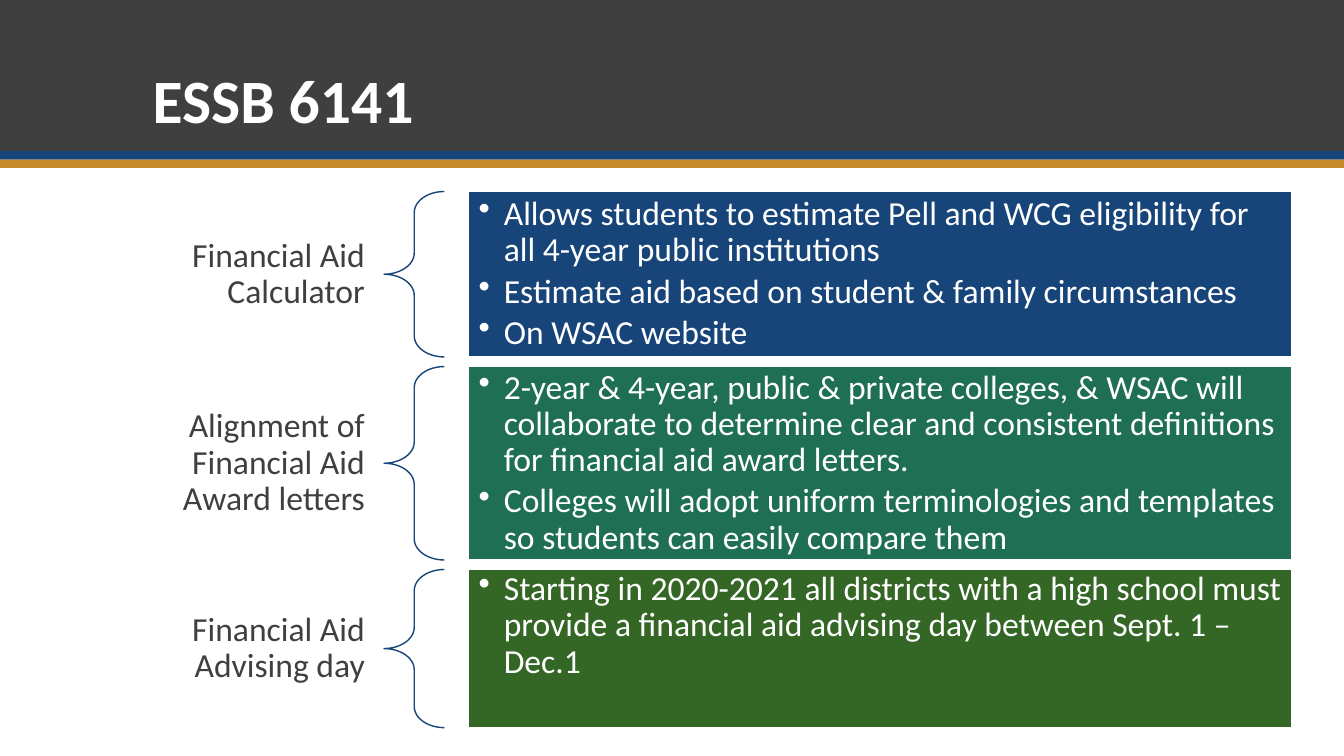
from pptx import Presentation
from pptx.dml.color import RGBColor
from pptx.enum.shapes import MSO_SHAPE as SHAPE
from pptx.enum.text import MSO_ANCHOR as ANCHOR, PP_ALIGN as ALIGN
from pptx.oxml import parse_xml
from pptx.oxml.ns import nsdecls
from pptx.util import Pt

GRAY, BLUE, GOLD, WHITE = "3F3F3F", "174479", "C6892B", "FFFFFF"
TEAL, GREEN = "1E6F53", "346625"
SLIDE_W, SLIDE_H = 960, 540
ROWS_TOP, ROW_GAP = 136.8, 6.8

# label, height, fill, text anchor, top inset, bullets
ROWS = [
    ("Financial Aid Calculator", 118.2, BLUE, ANCHOR.MIDDLE, 7.2, [
        "Allows students to estimate Pell and WCG eligibility for all 4-year "
        "public institutions",
        "Estimate aid based on student & family circumstances",
        "On WSAC website",
    ]),
    ("Alignment of Financial Aid Award letters", 138.2, TEAL, ANCHOR.MIDDLE, 7.2, [
        "2-year & 4-year, public & private colleges, & WSAC will collaborate to "
        "determine clear and consistent definitions for financial aid award letters.",
        "Colleges will adopt uniform terminologies and templates so students can "
        "easily compare them",
    ]),
    ("Financial Aid Advising day", 113, GREEN, ANCHOR.TOP, 1.5, [
        "Starting in 2020-2021 all districts with a high school must provide a "
        "financial aid advising day between Sept. 1 – Dec.1",
    ]),
]


def rgb(value):
    return RGBColor.from_string(value)


def add_panel(slide, box, fill, line=None):
    sp = slide.shapes.add_shape(SHAPE.RECTANGLE, *map(Pt, box))
    sp.shadow.inherit = False
    sp.fill.solid()
    sp.fill.fore_color.rgb = rgb(fill)
    if line:
        sp.line.color.rgb = rgb(line)
        sp.line.width = Pt(1)
    else:
        sp.line.fill.background()
    return sp


def add_brace(slide, box):
    sp = slide.shapes.add_shape(SHAPE.LEFT_BRACE, *map(Pt, box))
    sp.shadow.inherit = False
    sp.adjustments[0], sp.adjustments[1] = 0.35, 0.5
    sp.fill.background()
    sp.line.color.rgb = rgb(BLUE)
    sp.line.width = Pt(1)


def add_bullet(p):
    pPr = p._p.get_or_add_pPr()
    pPr.set("marL", str(Pt(18)))
    pPr.set("indent", str(-Pt(18)))
    pPr.append(parse_xml(f'<a:buChar {nsdecls("a")} char="•"/>'))


def write_text(sp, lines, color, insets, anchor=ANCHOR.MIDDLE, align=ALIGN.LEFT,
               size=24, bold=False, bullets=False):
    """Fill a shape with paragraphs; insets are left, top, right, bottom."""
    tf = sp.text_frame
    tf.word_wrap = True
    tf.vertical_anchor = anchor
    for side, inset in zip(("left", "top", "right", "bottom"), insets):
        setattr(tf, f"margin_{side}", Pt(inset))
    font_format = {"name": "Calibri", "size": Pt(size), "bold": bold}
    for i, line in enumerate(lines):
        p = tf.add_paragraph() if i else tf.paragraphs[0]
        if bullets:
            add_bullet(p)
        p.alignment = align
        p.line_spacing = 0.9
        p.space_after = Pt(3.6 if bullets else 0)
        r = p.add_run()
        r.text = line
        for name, value in font_format.items():
            setattr(r.font, name, value)
        r.font.color.rgb = rgb(color)


def add_text(slide, box, line, color, insets, **options):
    sp = slide.shapes.add_textbox(*map(Pt, box))
    write_text(sp, [line], color, insets, **options)


def add_header(slide, title):
    for top, height, fill in ((0, 108, GRAY), (108, 6, BLUE), (114, 6, GOLD)):
        add_panel(slide, (0, top, SLIDE_W, height), fill)
    add_text(slide, (102, 20, 756, 81.4), title, WHITE, (7.2, 3.6, 7.2, 3.6),
             anchor=ANCHOR.BOTTOM, size=44, bold=True)


def add_row(slide, top, label, height, fill, anchor, top_inset, bullets):
    add_text(slide, (58.3, top, 216, height), label, GRAY, (13.7, 5, 13.7, 5),
             align=ALIGN.RIGHT)
    add_brace(slide, (274.3, top, 43.2, height))
    sp = add_panel(slide, (334.8, top, 588, height), fill, line=WHITE)
    write_text(sp, bullets, WHITE, (7.2, top_inset, 7.2, 7.2), anchor=anchor,
               bullets=True)


def main():
    prs = Presentation()
    prs.slide_width, prs.slide_height = Pt(SLIDE_W), Pt(SLIDE_H)
    slide = prs.slides.add_slide(prs.slide_layouts[6])
    add_header(slide, "ESSB 6141")
    top = ROWS_TOP
    for label, height, *content in ROWS:
        add_row(slide, top, label, height, *content)
        top += height + ROW_GAP
    prs.save("out.pptx")


if __name__ == "__main__":
    main()
